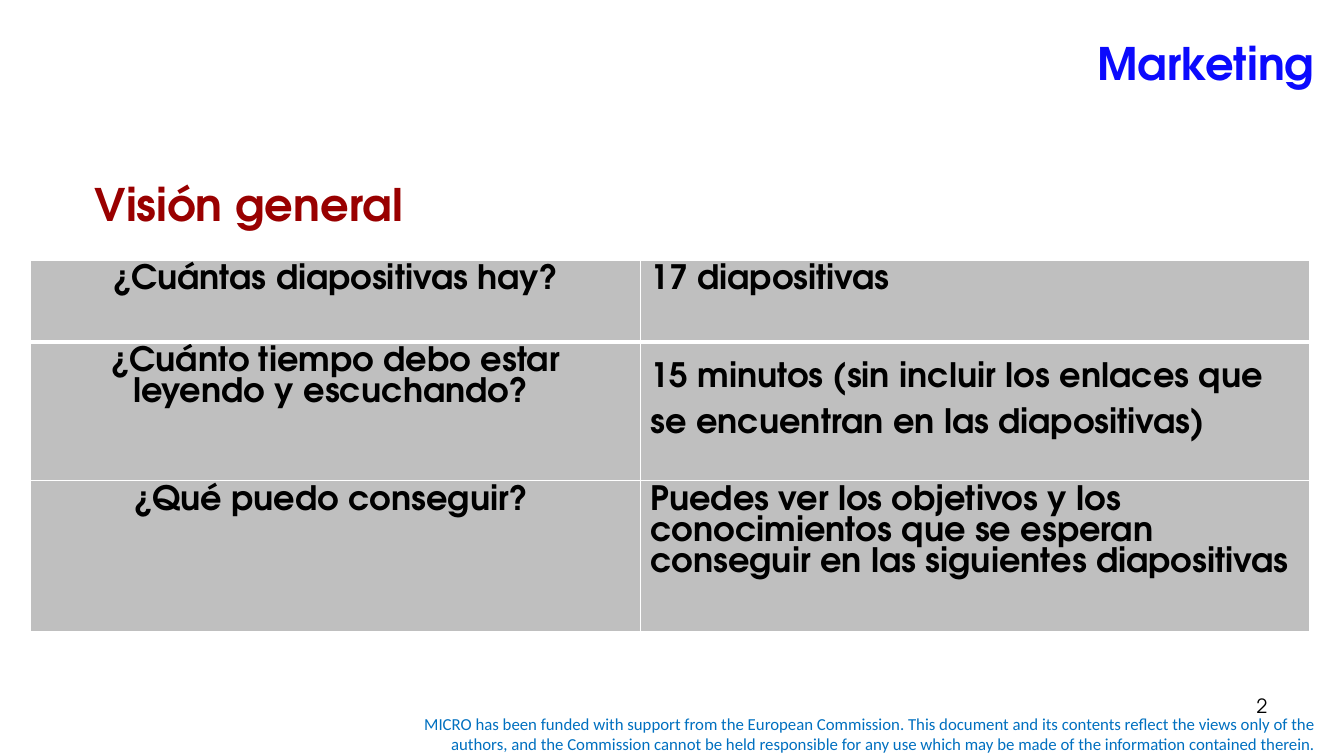
from dataclasses import dataclass

from lxml import etree
from pptx import Presentation
from pptx import util as u
from pptx.dml.color import RGBColor
from pptx.enum import text
from pptx.oxml import ns

COLORS = {
    "title": "0B0AFD",
    "heading": "990000",
    "body": "000000",
    "funding": "0070C0",
    "cell": "BFBFBF",
    "border": "FFFFFF",
}
HEADLINE_FONT = "TeX Gyre Adventor"
LEFT, CENTER, RIGHT = text.PP_ALIGN.LEFT, text.PP_ALIGN.CENTER, text.PP_ALIGN.RIGHT
TOP, MIDDLE = text.MSO_ANCHOR.TOP, text.MSO_ANCHOR.MIDDLE


@dataclass(frozen=True)
class Style:
    size: float
    color: str
    name: str = HEADLINE_FONT
    bold: bool = False
    align: text.PP_ALIGN = LEFT
    line_spacing: float = 1.0


@dataclass(frozen=True)
class Label:
    words: str
    at: tuple[float, float, float, float]
    style: Style
    anchor: text.MSO_ANCHOR = TOP


@dataclass(frozen=True)
class OverviewRow:
    question: str
    answer: str
    height: float
    answer_spacing: float = 1.0


TITLE = Label("Marketing", (1.14, 0, 12, 1.25),
              Style(32, "title", bold=True, align=RIGHT), MIDDLE)
LABELS = [
    Label("MICRO has been funded with support from the European Commission. "
          "This document and its contents reflect the views only of the authors, "
          "and the Commission cannot be held responsible for any use which may be "
          "made of the information contained therein.",
          (3.75, 7.03, 9.4, 0.5),
          Style(12, "funding", name="Calibri", align=RIGHT), MIDDLE),
    Label("2", (9.56, 6.83, 3.11, 0.52), Style(14, "body", align=RIGHT)),
    Label("Visión general", (0.84, 1.7, 4.75, 0.64), Style(32, "heading", bold=True)),
]
COLUMN_WIDTHS = (6.05, 6.64)
ROWS = [
    OverviewRow("¿Cuántas diapositivas hay?", "17 diapositivas", 0.81),
    OverviewRow("¿Cuánto tiempo debo estar leyendo y escuchando? ",
                "15 minutos (sin incluir los enlaces que se encuentran en las diapositivas)",
                1.38, 1.5),
    OverviewRow("¿Qué puedo conseguir? ",
                "Puedes ver los objetivos y los conocimientos que se esperan conseguir "
                "en las siguientes diapositivas", 1.5),
]


def write(frame, words: str, style: Style) -> None:
    para = frame.paragraphs[0]
    para.alignment = style.align
    para.line_spacing = style.line_spacing
    span = para.add_run()
    span.text = words
    for key in ("size", "name", "bold"):
        value = getattr(style, key)
        setattr(span.font, key, u.Pt(value) if key == "size" else value)
    span.font.color.rgb = RGBColor.from_string(COLORS[style.color])


def fill_label(shape, label: Label) -> None:
    frame = shape.text_frame
    settings = {"word_wrap": True, "auto_size": text.MSO_AUTO_SIZE.NONE,
                "vertical_anchor": label.anchor}
    for key, value in settings.items():
        setattr(frame, key, value)
    write(frame, label.words, label.style)


def add_borders(cell, widths: dict[str, float]) -> None:
    """Put one line per side, ahead of the cell's fill as the schema requires."""
    properties = cell._tc.get_or_add_tcPr()
    for index, (side, width) in enumerate(widths.items()):
        line = etree.Element(ns.qn(f"a:ln{side}"), w=str(u.Pt(width)))
        solid = etree.SubElement(line, ns.qn("a:solidFill"))
        etree.SubElement(solid, ns.qn("a:srgbClr"), val=COLORS["border"])
        properties.insert(index, line)


def add_overview(slide) -> None:
    heights = [row.height for row in ROWS]
    table = slide.shapes.add_table(
        len(ROWS), len(COLUMN_WIDTHS), u.Inches(0.3), u.Inches(2.58),
        u.Inches(sum(COLUMN_WIDTHS)), u.Inches(sum(heights))).table
    for column, width in zip(table.columns, COLUMN_WIDTHS):
        column.width = u.Inches(width)
    for index, row in enumerate(ROWS):
        table.rows[index].height = u.Inches(row.height)
        borders = {"L": 1, "R": 1, "T": 3 if index == 1 else 1, "B": 3 if index == 0 else 1}
        entries = ((row.question, CENTER, 1.0), (row.answer, LEFT, row.answer_spacing))
        for column_index, (words, align, spacing) in enumerate(entries):
            cell = table.cell(index, column_index)
            cell.fill.solid()
            cell.fill.fore_color.rgb = RGBColor.from_string(COLORS["cell"])
            add_borders(cell, borders)
            write(cell.text_frame, words,
                  Style(24, "body", bold=True, align=align, line_spacing=spacing))


def main() -> None:
    deck = Presentation()
    deck.slide_width, deck.slide_height = u.Inches(13.33), u.Inches(7.5)
    slide = deck.slides.add_slide(deck.slide_layouts.get_by_name("Title Only"))

    title = slide.shapes.title
    for key, value in zip(("left", "top", "width", "height"), TITLE.at):
        setattr(title, key, u.Inches(value))
    fill_label(title, TITLE)

    add_overview(slide)
    for label in LABELS:
        fill_label(slide.shapes.add_textbox(*map(u.Inches, label.at)), label)

    deck.save("out.pptx")


if __name__ == "__main__":
    main()
